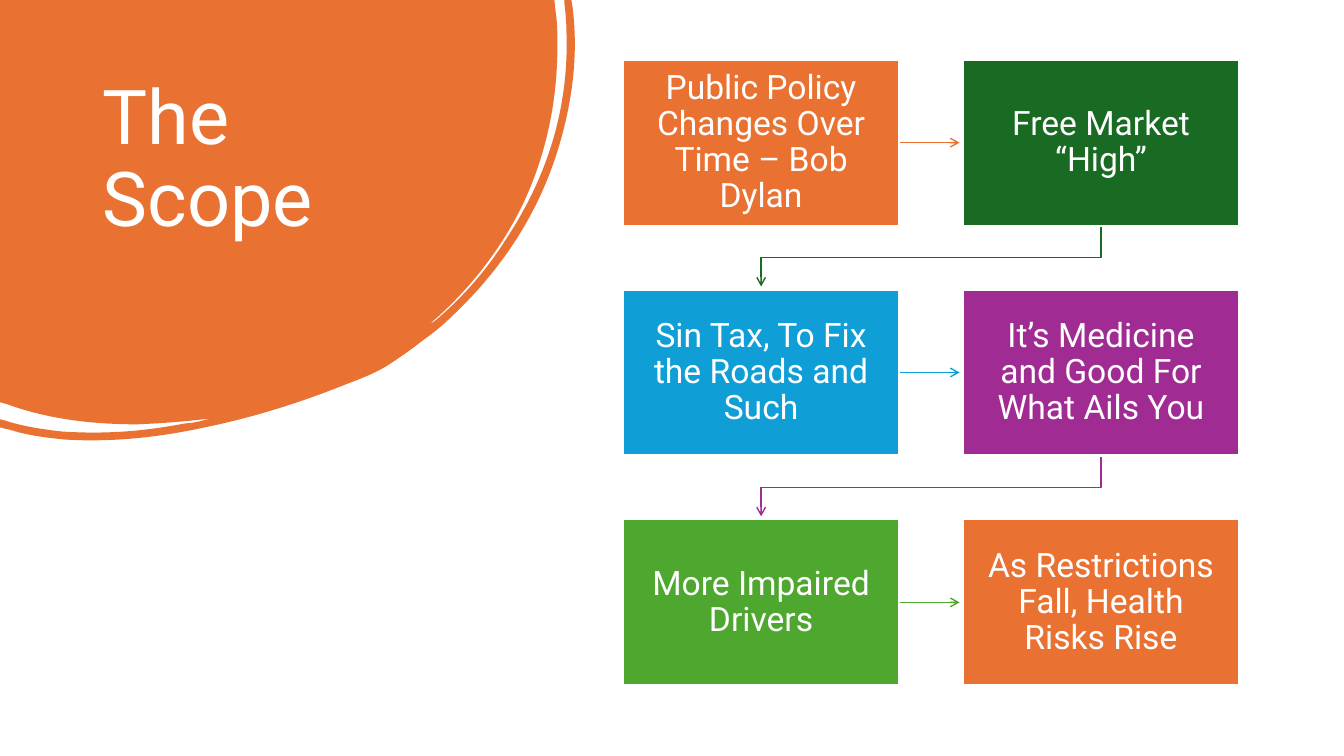
from lxml import etree
from pptx import Presentation
from pptx.dml.color import RGBColor
from pptx.enum.shapes import MSO_SHAPE
from pptx.enum.text import MSO_ANCHOR, MSO_AUTO_SIZE, PP_ALIGN
from pptx.oxml.ns import qn
from pptx.util import Pt

RECT = MSO_SHAPE.RECTANGLE
TOP, MIDDLE = MSO_ANCHOR.TOP, MSO_ANCHOR.MIDDLE
LEFT, CENTER = PP_ALIGN.LEFT, PP_ALIGN.CENTER
NO_FIT = MSO_AUTO_SIZE.NONE

# Content
TITLE = "The Scope"
STEPS = [
    ("Public Policy Changes Over Time – Bob Dylan", "orange"),
    ("Free Market “High”", "dark green"),
    ("Sin Tax, To Fix the Roads and Such", "blue"),
    ("It’s Medicine and Good For What Ails You", "purple"),
    ("More Impaired Drivers", "green"),
    ("As Restrictions Fall, Health Risks Rise", "orange"),
]
COLORS = {
    "orange": "E97132", "dark green": "196B24", "blue": "0F9ED5",
    "purple": "A02B93", "green": "4EA72E", "white": "FFFFFF",
}
FONT = "Roboto"

# Blob outline in points: a pair is a line, six numbers are a Bezier curve
BLOB = [
    (0, 0), (396, 0), (397.4, 12.2),
    (398.2, 18.7, 398.2, 25.9, 398.2, 32.4),
    (398.2, 72.7, 390.2, 110.9, 373, 146.9),
    (357.1, 179.3, 334.8, 207.4, 307.4, 231.1),
    (308.9, 231.1, 309.6, 229.7, 311, 229),
    (330.5, 212.4, 347, 193.7, 360.7, 172.1),
    (391, 126.7, 406.8, 77, 404.6, 21.6),
    (404.6, 15.1, 403.9, 8.6, 403.2, 2.2),
    (403.2, 0), (408.2, 0), (409, 5),
    (413.3, 38.9, 409, 73.4, 398.2, 108),
    (383.8, 154.1, 357.8, 193, 322.6, 226.1),
    (316.1, 232.6, 308.9, 238.3, 301.7, 243.4),
    (294.5, 249.1, 287.3, 254.2, 278.6, 259.9),
    (270, 265.7, 259.2, 270, 247.7, 274.3),
    (215.3, 287.3, 181.4, 298.1, 146.2, 305.3),
    (113, 312.5, 79.2, 316.1, 45.4, 313.9),
    (32.4, 312.5, 20.2, 311, 8.6, 307.4),
    (0, 305.3), (0, 299.5), (2.9, 300.2),
    (16.6, 304.6, 30.2, 306.7, 43.9, 308.2),
    (74.2, 310.3, 103, 308.2, 132.5, 302.4),
    (136.1, 302.4, 139, 301.7, 142.6, 301),
    (145.4, 300.2, 148.3, 299.5, 151.2, 298.8),
    (133.9, 301, 115.9, 302.4, 97.9, 303.1),
    (66.2, 303.1, 34.6, 299.5, 5, 288.7),
    (0, 287.3),
]

# Grid of boxes, in points
COLS = 2
GRID_X, GRID_Y = 444.8, 42.6
BOX_W, BOX_H = 197.7, 118.6
PITCH_X, PITCH_Y = 242.8, 164.2
ARROW_GAP = 2.2


def rgb(name):
    return RGBColor.from_string(COLORS[name])


def add_outline(shapes, outline, close):
    points = [(Pt(part[i]), Pt(part[i + 1]))
              for part in outline for i in range(0, len(part), 2)]
    builder = shapes.build_freeform(*points[0], scale=1.0)
    builder.add_line_segments(points[1:], close=close)
    sp = builder.convert_to_shape()
    sp.shadow.inherit = False
    # Merge the three points of each curve into one Bezier segment
    lines = iter(list(sp._element.iter(qn("a:lnTo"))))
    for part in outline[1:]:
        first = next(lines)
        if len(part) == 6:
            curve = etree.Element(qn("a:cubicBezTo"))
            first.addprevious(curve)
            for line in (first, next(lines), next(lines)):
                curve.append(line[0])
                line.getparent().remove(line)
    return sp


def add_arrow(shapes, points, color):
    sp = add_outline(shapes, points, False)
    sp.fill.background()
    sp.line.color.rgb = rgb(color)
    sp.line.width = Pt(1)
    etree.SubElement(sp.line._get_or_add_ln(), qn("a:tailEnd"), type="arrow")


def write(sp, text, size, align, frame):
    tf = sp.text_frame
    for key, value in frame.items():
        setattr(tf, key, value)
    p = tf.paragraphs[0]
    p.alignment, p.line_spacing = align, 0.9
    r = p.add_run()
    r.text = text
    for key, value in {"name": FONT, "size": Pt(size)}.items():
        setattr(r.font, key, value)
    r.font.color.rgb = rgb("white")


prs = Presentation()
prs.slide_width, prs.slide_height = Pt(960), Pt(540)
s = prs.slides.add_slide(prs.slide_layouts[5])

# Blob, behind the title
blob = add_outline(s.shapes, BLOB, True)
blob.fill.solid()
blob.fill.fore_color.rgb = rgb("orange")
blob.line.fill.background()
s.shapes._spTree.insert(2, blob._element)

# Title
title = s.shapes.title
title.left, title.top, title.width, title.height = Pt(66.2), Pt(53.3), Pt(253.4), Pt(159.8)
write(title, TITLE, 54, LEFT,
      {"word_wrap": True, "auto_size": NO_FIT, "vertical_anchor": TOP})

# Arrows: straight along a row, bent down to the next row
corners = [(GRID_X + i % COLS * PITCH_X, GRID_Y + i // COLS * PITCH_Y)
           for i in range(len(STEPS))]
for (_, color), (x, y), (next_x, next_y) in zip(STEPS, corners, corners[1:]):
    if y == next_y:
        mid_y = y + BOX_H / 2
        points = [(x + BOX_W, mid_y), (next_x - ARROW_GAP, mid_y)]
    else:
        from_x, to_x = x + BOX_W / 2, next_x + BOX_W / 2
        bottom = y + BOX_H
        bend_y = (bottom + next_y) / 2
        points = [(from_x, bottom), (from_x, bend_y),
                  (to_x, bend_y), (to_x, next_y - ARROW_GAP)]
    add_arrow(s.shapes, points, color)

# Boxes
box_frame = {
    "word_wrap": True, "vertical_anchor": MIDDLE,
    "margin_left": Pt(9.7), "margin_right": Pt(9.7),
    "margin_top": Pt(10.2), "margin_bottom": Pt(10.2),
}
for (text, color), (x, y) in zip(STEPS, corners):
    sp = s.shapes.add_shape(RECT, Pt(x), Pt(y), Pt(BOX_W), Pt(BOX_H))
    sp.shadow.inherit = False
    sp.fill.solid()
    sp.fill.fore_color.rgb = rgb(color)
    sp.line.color.rgb = rgb("white")
    sp.line.width = Pt(1.5)
    write(sp, text, 24, CENTER, box_frame)

prs.save("out.pptx")
